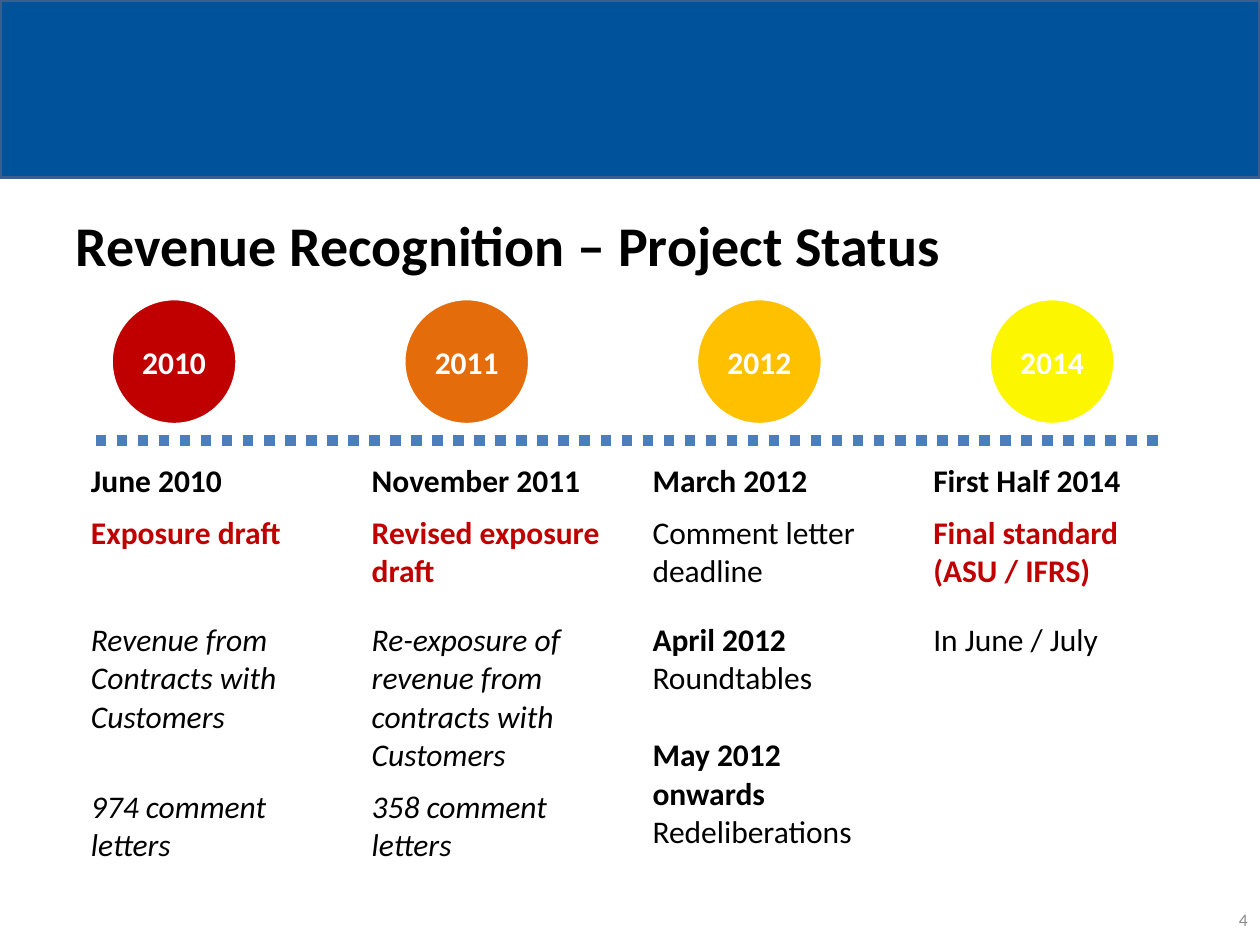
from pptx import Presentation
from pptx import util as u
from pptx.dml import color
from pptx.enum import dml, shapes, text
from pptx.oxml import ns
from lxml import etree

HUES = {"band": "00539B", "edge": "3A5F8C", "rule": "4B7EBC", "page": "8C8C8C",
        "ink": "000000", "white": "FFFFFF", "red": "C00000",
        "orange": "E46C0A", "gold": "FFC000", "yellow": "FCF600"}
STEPS = [("2010", "red"), ("2011", "orange"), ("2012", "gold"), ("2014", "yellow")]
BOLD = {"bold": True}
ITAL = {"italic": True}
KEY = {"bold": True, "hue": "red"}
ROWS = [
    [[("June 2010", BOLD)], [("November 2011", BOLD)],
     [("March 2012", BOLD)], [("First Half 2014", BOLD)]],
    [[("Exposure draft", KEY)], [("Revised exposure draft", KEY)],
     [("Comment letter deadline", {})],
     [("Final standard", KEY), ("(ASU / IFRS)", KEY)]],
    [[("Revenue from Contracts with Customers", ITAL)],
     [("Re-exposure of revenue from contracts with Customers", ITAL)],
     [("April 2012", BOLD), ("Roundtables", {}),
      ("May 2012", {"bold": True, "gap": 22}), ("onwards", BOLD),
      ("Redeliberations", {})],
     [("In June / July", {})]],
    [[("974 comment letters", ITAL)], [("358 comment letters", ITAL)]],
]


def rgb(hue):
    """Return the named colour."""
    return color.RGBColor.from_string(HUES[hue])


def write(para, words, size=18, hue="ink", bold=False, italic=False,
          align=text.PP_ALIGN.LEFT, gap=0):
    """Put formatted words in a paragraph."""
    para.alignment = align
    if gap:
        para.space_before = u.Pt(gap)
    run = para.add_run()
    run.text = words
    font = run.font
    font.name, font.size, font.bold, font.italic = "Calibri", u.Pt(size), bold, italic
    font.color.rgb = rgb(hue)


class Deck:
    """Hold the style and the current slide."""

    def __init__(self):
        """Start a deck with one title-only slide."""
        self.file = Presentation()
        self.file.slide_width, self.file.slide_height = u.Cm(25.4), u.Cm(19.05)
        self.slide = self.file.slides.add_slide(self.file.slide_layouts[5])
        self.items = self.slide.shapes

    def title(self, words, *box):
        """Place and fill the title."""
        head = self.items.title
        head.left, head.top, head.width, head.height = map(u.Cm, box)
        head.text_frame.vertical_anchor = text.MSO_ANCHOR.MIDDLE
        write(head.text_frame.paragraphs[0], words, size=32, bold=True)

    def shape(self, kind, fill, line, *box):
        """Add a filled preset shape."""
        item = self.items.add_shape(kind, *map(u.Cm, box))
        item.shadow.inherit = False
        item.fill.solid()
        item.fill.fore_color.rgb = rgb(fill)
        item.line.color.rgb = rgb(line)
        item.line.width = u.Pt(2)
        return item

    def disc(self, words, fill, *box):
        """Add a year disc."""
        frame = self.shape(shapes.MSO_SHAPE.OVAL, fill, "white", *box).text_frame
        frame.vertical_anchor = text.MSO_ANCHOR.MIDDLE
        write(frame.paragraphs[0], words, hue="white", bold=True,
              align=text.PP_ALIGN.CENTER)

    def rule(self, *ends):
        """Add the dotted timeline."""
        item = self.items.add_connector(shapes.MSO_CONNECTOR.STRAIGHT, *map(u.Cm, ends))
        item.line.color.rgb = rgb("rule")
        item.line.width = u.Pt(6)
        item.line.dash_style = dml.MSO_LINE.ROUND_DOT
        etree.SubElement(item._element.spPr, ns.qn("a:effectLst"))

    def label(self, words, *box, **style):
        """Add a text box."""
        frame = self.items.add_textbox(*map(u.Cm, box)).text_frame
        frame.word_wrap = True
        frame.vertical_anchor = text.MSO_ANCHOR.MIDDLE
        write(frame.paragraphs[0], words, **style)

    def table(self, rows, left, top, wides, highs):
        """Add a plain table whose short last row joins the one above."""
        grid = self.items.add_table(len(highs), len(wides), u.Cm(left), u.Cm(top),
                                    u.Cm(sum(wides)), u.Cm(sum(highs))).table
        grid.first_row = grid.horz_banding = False
        for col, wide in zip(grid.columns, wides):
            col.width = u.Cm(wide)
        for row, high in zip(grid.rows, highs):
            row.height = u.Cm(high)
        for cell in grid.iter_cells():
            cell.fill.background()
        for r, row in enumerate(rows):
            for c, lines in enumerate(row):
                frame = grid.cell(r, c).text_frame
                for n, (words, style) in enumerate(lines):
                    para = frame.add_paragraph() if n else frame.paragraphs[0]
                    write(para, words, **style)
        last = len(rows) - 1
        for c in range(len(rows[last]), len(wides)):
            grid.cell(last - 1, c).merge(grid.cell(last, c))


def main():
    """Build the project status slide."""
    deck = Deck()
    deck.shape(shapes.MSO_SHAPE.RECTANGLE, "band", "edge", 0, 0, 25.4, 3.58)
    deck.title("Revenue Recognition – Project Status", 1.27, 4.01, 22.86, 1.83)
    deck.label("4", 19.48, 18.03, 5.92, 1.02, size=10, hue="page",
               align=text.PP_ALIGN.RIGHT)
    for n, (year, hue) in enumerate(STEPS):
        deck.disc(year, hue, 2.24 + n * 5.9, 6.02, 2.54, 2.54)
    deck.rule(1.93, 8.88, 23.47, 8.88)
    deck.table(ROWS, 1.58, 9.2, [5.66, 5.66, 5.66, 6.08], [1.04, 2.16, 3.36, 1.8])
    deck.file.save("out.pptx")


if __name__ == "__main__":
    main()
